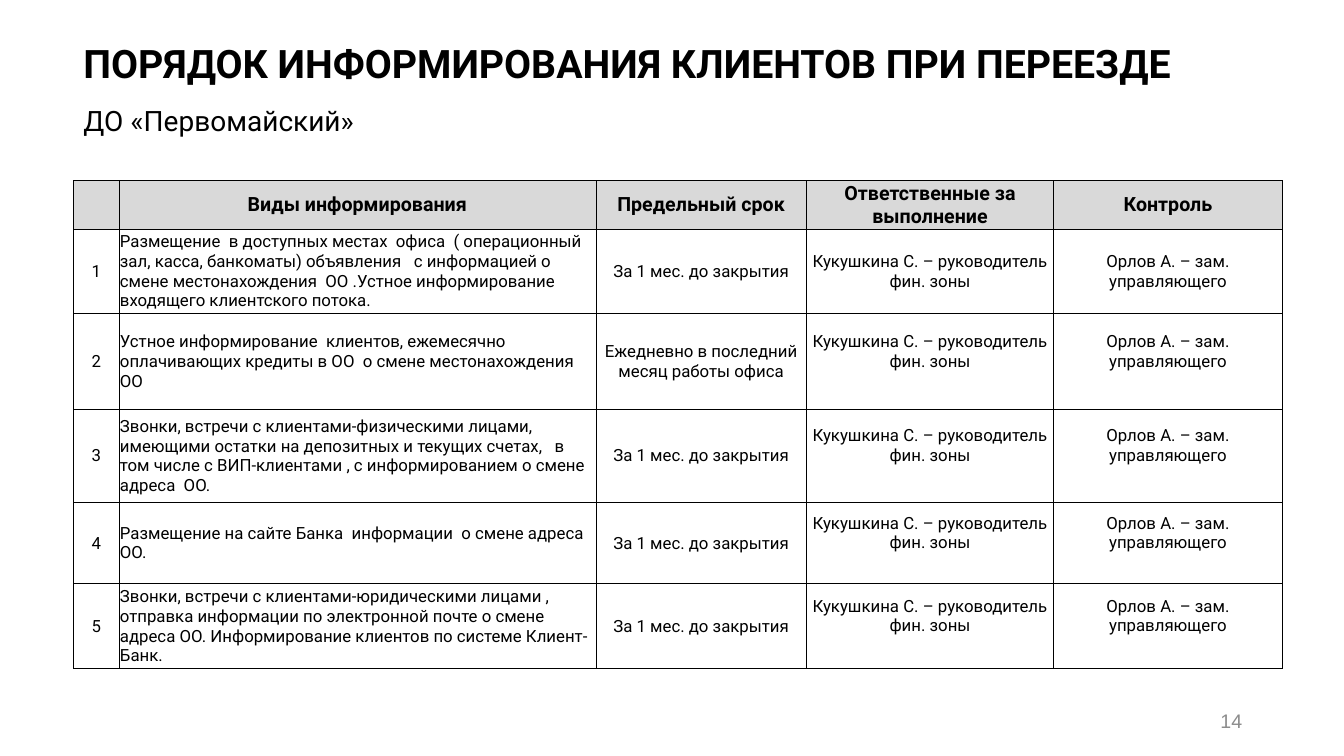
from dataclasses import dataclass

from lxml.etree import SubElement
from pptx import Presentation
from pptx.dml.color import RGBColor
from pptx.enum.text import MSO_ANCHOR, MSO_AUTO_SIZE, PP_ALIGN
from pptx.oxml.ns import qn
from pptx.util import Inches, Pt


@dataclass(frozen=True)
class Theme:
    font: str = "Roboto"
    plain: str = "Arial"
    ink: str = "000000"
    gray: str = "8C8C8C"
    head: str = "D9D9D9"
    paper: str = "FFFFFF"
    title: int = 28
    sub: int = 20
    label: int = 14
    body: int = 12
    rule: float = 0.5


THEME = Theme()

COLS = [0.45, 4.73, 2.09, 2.45, 2.27]
ROWS = [0.48, 0.84, 0.95, 0.92, 0.81, 0.84]
HEADS = ["", "Виды информирования", "Предельный срок",
         "Ответственные за выполнение", "Контроль"]
MONTH = "За 1 мес. до закрытия"
DOER = "Кукушкина С. – руководитель фин. зоны"
CHECK = "Орлов А. – зам. управляющего"
STEPS = [
    ("Размещение  в доступных местах  офиса  ( операционный зал, касса, "
     "банкоматы) объявления   с информацией о смене местонахождения  ОО "
     ".Устное информирование  входящего клиентского потока.", MONTH),
    ("Устное информирование  клиентов, ежемесячно оплачивающих кредиты в ОО  "
     "о смене местонахождения  ОО",
     "Ежедневно в последний месяц работы офиса"),
    ("Звонки, встречи с клиентами-физическими лицами, имеющими остатки на "
     "депозитных и текущих счетах,   в том числе с ВИП-клиентами , "
     "с информированием о смене адреса  ОО.", MONTH),
    ("Размещение на сайте Банка  информации  о смене адреса  ОО.", MONTH),
    ("Звонки, встречи с клиентами-юридическими лицами , отправка информации "
     "по электронной почте о смене адреса ОО. Информирование клиентов по "
     "системе Клиент-Банк.", MONTH),
]


def style(item, **values):
    for name, value in values.items():
        setattr(item, name, value)


def write(para, text, size, bold=False, font=THEME.font, color=THEME.ink,
          align=PP_ALIGN.LEFT):
    para.alignment = align
    run = para.add_run()
    run.text = text
    style(run.font, name=font, size=Pt(size), bold=bold)
    run.font.color.rgb = RGBColor.from_string(color)


def frame(slide, box):
    text = slide.shapes.add_textbox(*map(Inches, box)).text_frame
    text.word_wrap = True
    return text


def border(cell):
    """Draw a thin rule on all four sides of the cell."""
    props = cell._tc.get_or_add_tcPr()
    for index, side in enumerate(("a:lnL", "a:lnR", "a:lnT", "a:lnB")):
        line = SubElement(props, qn(side), w=str(int(Pt(THEME.rule))))
        fill = SubElement(line, qn("a:solidFill"))
        SubElement(fill, qn("a:srgbClr"), val=THEME.ink)
        props.remove(line)
        props.insert(index, line)


def add_title(slide, box):
    text = frame(slide, box)
    text.auto_size = MSO_AUTO_SIZE.SHAPE_TO_FIT_TEXT
    first, second = text.paragraphs[0], text.add_paragraph()
    write(first, "ПОРЯДОК ИНФОРМИРОВАНИЯ КЛИЕНТОВ ПРИ ПЕРЕЕЗДЕ",
          THEME.title, bold=True)
    write(second, "ДО «Первомайский»", THEME.sub)
    for para in (first, second):
        para.space_after = Pt(12)


def add_plan(slide, box):
    data = [HEADS] + [[str(num), kind, term, DOER, CHECK]
                      for num, (kind, term) in enumerate(STEPS, 1)]
    table = slide.shapes.add_table(len(ROWS), len(COLS),
                                   *map(Inches, box)).table
    style(table, first_row=False, horz_banding=False)
    for col, width in zip(table.columns, COLS):
        col.width = Inches(width)
    for row, height in zip(table.rows, ROWS):
        row.height = Inches(height)
    for r, texts in enumerate(data):
        for c, text in enumerate(texts):
            cell = table.cell(r, c)
            # Names sit half a line above the middle from the second step on
            lift = 0.2 if r > 1 and c > 2 else 0
            style(cell, vertical_anchor=MSO_ANCHOR.MIDDLE,
                  margin_left=Inches(0.01), margin_right=Inches(0.01),
                  margin_top=Inches(0.01), margin_bottom=Inches(lift))
            cell.fill.solid()
            cell.fill.fore_color.rgb = RGBColor.from_string(
                THEME.paper if r else THEME.head)
            border(cell)
            if text:
                left = r > 0 and c == 1
                write(cell.text_frame.paragraphs[0], text,
                      THEME.body if r else THEME.label, bold=r == 0,
                      align=PP_ALIGN.LEFT if left else PP_ALIGN.CENTER)


def add_number(slide, box):
    text = frame(slide, box)
    text.vertical_anchor = MSO_ANCHOR.MIDDLE
    write(text.paragraphs[0], "14", THEME.label, font=THEME.plain,
          color=THEME.gray, align=PP_ALIGN.RIGHT)


def main():
    deck = Presentation()
    style(deck, slide_width=Inches(13.33), slide_height=Inches(7.5))
    slide = deck.slides.add_slide(deck.slide_layouts[6])
    add_number(slide, (9.42, 6.95, 3, 0.4))
    add_title(slide, (0.73, 0.34, 12.27, 1.08))
    add_plan(slide, (0.73, 1.79, sum(COLS), sum(ROWS)))
    deck.save("out.pptx")


if __name__ == "__main__":
    main()
